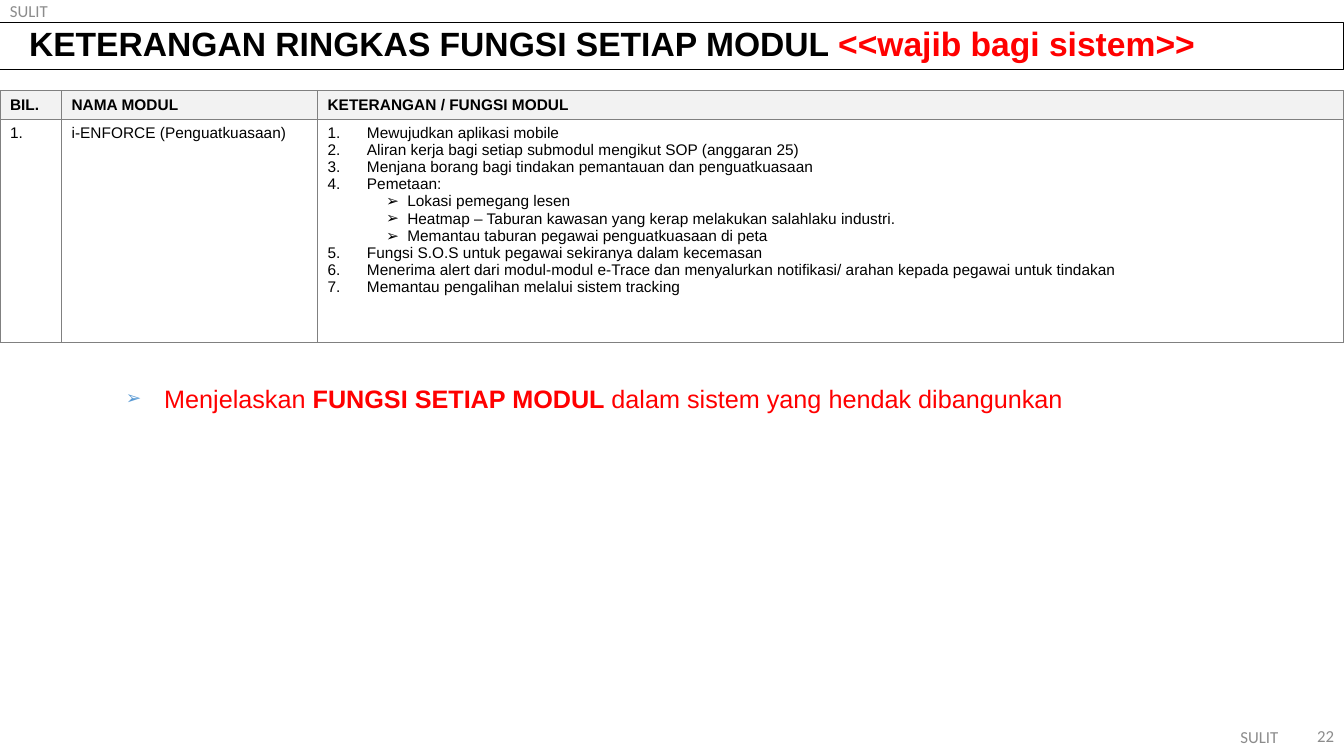
from lxml import etree
from pptx import Presentation
from pptx.dml.color import RGBColor
from pptx.enum.shapes import MSO_SHAPE
from pptx.enum.text import MSO_ANCHOR, PP_ALIGN
from pptx.oxml.ns import qn
from pptx.util import Inches, Pt

RECTANGLE = MSO_SHAPE.RECTANGLE
TOP, MIDDLE = MSO_ANCHOR.TOP, MSO_ANCHOR.MIDDLE
LEFT, RIGHT = PP_ALIGN.LEFT, PP_ALIGN.RIGHT

WIDTH, HEIGHT = Inches(13.33), Inches(7.5)
BLACK, RED, GREY, BORDER = "000000", "FF0000", "8C8C8C", "808080"
HEADER_FILL, ARROW_BLUE = "F2F2F2", "5B9BD5"

HEADINGS = ["BIL.", "NAMA MODUL", "KETERANGAN / FUNGSI MODUL"]
COLUMN_SHARES = [4.58, 19.05, 76.37]
ROW_SHARES = [3.6, 29.5]
FUNCTIONS = [
    "Mewujudkan aplikasi mobile",
    "Aliran kerja bagi setiap submodul mengikut SOP (anggaran 25)",
    "Menjana borang bagi tindakan pemantauan dan penguatkuasaan",
    "Pemetaan:",
]
MAPPING = [
    "Lokasi pemegang lesen",
    "Heatmap – Taburan kawasan yang kerap melakukan salahlaku industri.",
    "Memantau taburan pegawai penguatkuasaan di peta",
]
MORE_FUNCTIONS = [
    "Fungsi S.O.S untuk pegawai sekiranya dalam kecemasan",
    "Menerima alert dari modul-modul e-Trace dan menyalurkan notifikasi/ "
    "arahan kepada pegawai untuk tindakan",
    "Memantau pengalihan melalui sistem tracking",
]


def color(hex_text):
    return RGBColor.from_string(hex_text)


def across(share):
    """Length as hundredths of the slide's width."""
    return round(WIDTH * share / 100)


def down(share):
    """Length as hundredths of the slide's height."""
    return round(HEIGHT * share / 100)


def place(left, top, width, height):
    return across(left), down(top), across(width), down(height)


def add_xml(parent, tag, **attributes):
    child = etree.SubElement(parent, qn(tag))
    for name, value in attributes.items():
        child.set(name, str(value))
    return child


def write(paragraph, text, size=11, font="Arial", ink=BLACK, bold=False, align=LEFT):
    paragraph.alignment = align
    run = paragraph.add_run()
    run.text = text
    run.font.size, run.font.name, run.font.bold = Pt(size), font, bold
    run.font.color.rgb = color(ink)


def set_indent(paragraph, margin, hanging=0):
    properties = paragraph._p.get_or_add_pPr()
    properties.set("marL", str(Inches(margin)))
    properties.set("indent", str(-Inches(hanging)))
    return properties


def add_number(paragraph, start):
    properties = set_indent(paragraph, 0.39, 0.39)
    add_xml(properties, "a:buFont", typeface="+mj-lt")
    add_xml(properties, "a:buAutoNum", type="arabicPeriod", startAt=start)


def add_arrow(paragraph, margin, hanging, ink=None, percent=100):
    properties = set_indent(paragraph, margin, hanging)
    if ink:
        add_xml(add_xml(properties, "a:buClr"), "a:srgbClr", val=ink)
    add_xml(properties, "a:buSzPct", val=percent * 1000)
    add_xml(properties, "a:buFont", typeface="Arial")
    add_xml(properties, "a:buChar", char="➢")


def add_text_box(slide, box, anchor=MIDDLE):
    frame = slide.shapes.add_textbox(*place(*box)).text_frame
    frame.word_wrap = True
    frame.vertical_anchor = anchor
    return frame


def add_marking(slide, text, box, align=LEFT):
    frame = add_text_box(slide, box)
    frame.margin_top = frame.margin_bottom = 0
    write(frame.paragraphs[0], text, size=12, font="Calibri", ink=GREY, align=align)


def add_title(slide):
    banner = slide.shapes.add_shape(RECTANGLE, *place(0, 2.93, 100, 6.27))
    banner.shadow.inherit = False
    banner.fill.background()
    banner.line.color.rgb = color(BLACK)
    banner.line.width = Pt(0.75)
    banner.text_frame.vertical_anchor = MIDDLE
    title = banner.text_frame.paragraphs[0]
    set_indent(title, 0.19)
    title.line_spacing = 0.9
    write(title, "KETERANGAN RINGKAS FUNGSI SETIAP MODUL ", size=24, bold=True)
    write(title, "<<wajib bagi sistem>>", size=24, bold=True, ink=RED)


def style_cell(cell, fill=None, anchor=TOP):
    properties = cell._tc.get_or_add_tcPr()
    for side in ("a:lnL", "a:lnR", "a:lnT", "a:lnB"):
        edge = add_xml(properties, side, w=Pt(1))
        add_xml(add_xml(edge, "a:solidFill"), "a:srgbClr", val=BORDER)
    if fill:
        cell.fill.solid()
        cell.fill.fore_color.rgb = color(fill)
    else:
        cell.fill.background()
    cell.vertical_anchor = anchor


def fill_functions(frame):
    entries = [(text, 1) for text in FUNCTIONS]
    entries += [(text, None) for text in MAPPING]
    entries += [(text, len(FUNCTIONS) + 1) for text in MORE_FUNCTIONS]
    for index, (text, start) in enumerate(entries):
        paragraph = frame.add_paragraph() if index else frame.paragraphs[0]
        if start:
            add_number(paragraph, start)
        else:
            add_arrow(paragraph, 0.79, 0.21)
        write(paragraph, text)


def add_module_table(slide):
    table = slide.shapes.add_table(
        len(ROW_SHARES), len(HEADINGS), *place(0, 12, 100, sum(ROW_SHARES))).table
    table.first_row = table.horz_banding = False
    for column, share in zip(table.columns, COLUMN_SHARES):
        column.width = across(share)
    for row, share in zip(table.rows, ROW_SHARES):
        row.height = down(share)
    for index, heading in enumerate(HEADINGS):
        header, body = table.cell(0, index), table.cell(1, index)
        style_cell(header, HEADER_FILL, MIDDLE)
        style_cell(body)
        write(header.text_frame.paragraphs[0], heading, bold=True)
    for index, text in enumerate(["1.", "i-ENFORCE (Penguatkuasaan)"]):
        write(table.cell(1, index).text_frame.paragraphs[0], text)
    fill_functions(table.cell(1, 2).text_frame)


def add_guidance(slide):
    guidance = add_text_box(slide, (8.63, 50, 89.35, 19.87), TOP).paragraphs[0]
    add_arrow(guidance, 0.38, 0.38, ARROW_BLUE, 73)
    guidance.space_before = Pt(3.6)
    write(guidance, "Menjelaskan ", size=18, ink=RED)
    write(guidance, "FUNGSI SETIAP MODUL ", size=18, ink=RED, bold=True)
    write(guidance, "dalam sistem yang hendak dibangunkan", size=18, ink=RED)


def main():
    deck = Presentation()
    deck.slide_width, deck.slide_height = WIDTH, HEIGHT
    slide = deck.slides.add_slide(deck.slide_layouts[6])

    # Security markings and page number
    add_marking(slide, "SULIT", (90.55, 94.8, 5.3, 5.33), RIGHT)
    add_marking(slide, "SULIT", (0, 0, 5.3, 2.93))
    add_marking(slide, "22", (95.85, 94.67, 4.15, 5.33), RIGHT)

    # Title, module table and guidance
    add_title(slide)
    add_module_table(slide)
    add_guidance(slide)
    deck.save("out.pptx")


if __name__ == "__main__":
    main()
